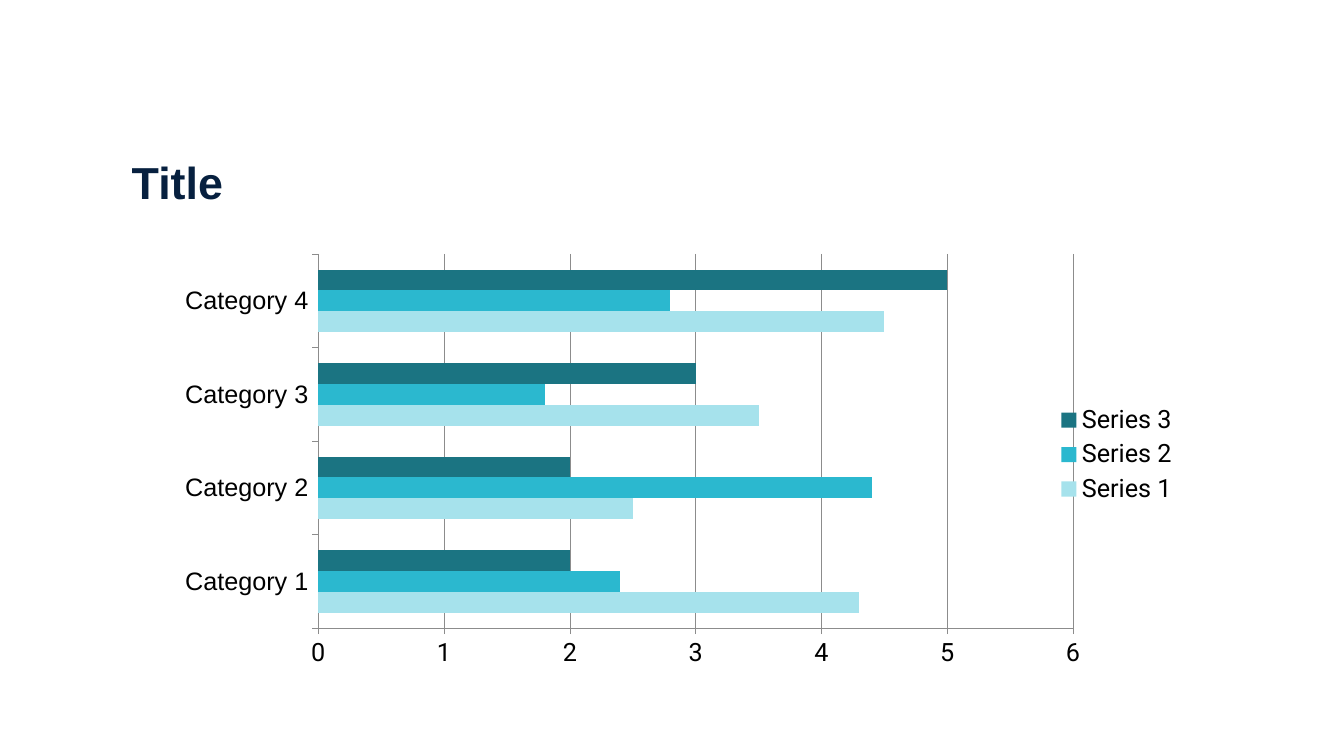
import dataclasses

import pptx
import pptx.chart.data
import pptx.dml.color
import pptx.enum.chart
import pptx.enum.text
import pptx.oxml
import pptx.oxml.ns
import pptx.util

Cm = pptx.util.Cm
Pt = pptx.util.Pt


def color(value):
    return pptx.dml.color.RGBColor.from_string(value)


@dataclasses.dataclass(frozen=True)
class Theme:
    heading_font: str = "Arial"
    body_font: str = "Roboto"
    title_size: int = 32
    chart_size: int = 18
    title_color: str = "07203F"
    text_color: str = "000000"
    line_color: str = "8C8C8C"
    line_width: float = 0.5
    series_colors: tuple = ("A6E2EC", "2BB8CF", "1B7482")


class SlideBuilder:
    def __init__(self, slide, theme):
        self.slide = slide
        self.theme = theme

    def style_font(self, font, name, size, rgb, bold=False):
        font.name = name
        font.size = Pt(size)
        font.bold = bold
        font.color.rgb = color(rgb)

    def style_line(self, line):
        line.color.rgb = color(self.theme.line_color)
        line.width = Pt(self.theme.line_width)

    def title(self, text, left, top, width, height):
        frame = self.slide.shapes.add_textbox(left, top, width, height).text_frame
        frame.word_wrap = True
        frame.auto_size = pptx.enum.text.MSO_AUTO_SIZE.SHAPE_TO_FIT_TEXT
        paragraph = frame.paragraphs[0]
        paragraph.text = text
        self.style_font(paragraph.font, self.theme.heading_font,
                        self.theme.title_size, self.theme.title_color, bold=True)

    def bar_chart(self, categories, series, left, top, width, height, plot_area):
        theme = self.theme
        data = pptx.chart.data.CategoryChartData()
        data.categories = categories
        for name, values in series.items():
            data.add_series(name, values)
        chart = self.slide.shapes.add_chart(
            pptx.enum.chart.XL_CHART_TYPE.BAR_CLUSTERED,
            left, top, width, height, data).chart
        chart.has_title = False
        self.style_font(chart.font, theme.body_font, theme.chart_size, theme.text_color)

        # Bars
        plot = chart.plots[0]
        plot.gap_width = 150
        plot.vary_by_categories = False
        for bars, fill_color in zip(plot.series, theme.series_colors):
            bars.format.fill.solid()
            bars.format.fill.fore_color.rgb = color(fill_color)

        # Axes and gridlines
        for axis, font_name in ((chart.category_axis, theme.heading_font),
                                (chart.value_axis, theme.body_font)):
            axis.major_tick_mark = pptx.enum.chart.XL_TICK_MARK.OUTSIDE
            axis.minor_tick_mark = pptx.enum.chart.XL_TICK_MARK.NONE
            self.style_line(axis.format.line)
            self.style_font(axis.tick_labels.font, font_name,
                            theme.chart_size, theme.text_color)
        chart.category_axis.has_major_gridlines = False
        value_axis = chart.value_axis
        value_axis.minimum_scale = 0
        value_axis.maximum_scale = 6
        value_axis.major_unit = 1
        value_axis.has_major_gridlines = True
        self.style_line(value_axis.major_gridlines.format.line)

        # Legend
        chart.has_legend = True
        chart.legend.position = pptx.enum.chart.XL_LEGEND_POSITION.RIGHT
        chart.legend.include_in_layout = False
        self.style_font(chart.legend.font, theme.body_font,
                        theme.chart_size, theme.text_color)
        self.place_plot(chart, plot_area)

    def place_plot(self, chart, plot_area):
        """Fix the inner plot area as fractions of the chart."""
        settings = [("layoutTarget", "inner"), ("xMode", "edge"), ("yMode", "edge")]
        settings += zip("xywh", plot_area)
        items = "".join(f'<c:{tag} val="{value}"/>' for tag, value in settings)
        layout = pptx.oxml.parse_xml(
            f'<c:layout {pptx.oxml.ns.nsdecls("c")}>'
            f"<c:manualLayout>{items}</c:manualLayout></c:layout>")
        area = chart.element.find(".//" + pptx.oxml.ns.qn("c:plotArea"))
        for old_layout in area.findall(pptx.oxml.ns.qn("c:layout")):
            area.remove(old_layout)
        area.insert(0, layout)


def main():
    deck = pptx.Presentation()
    deck.slide_width = Cm(33.87)
    deck.slide_height = Cm(19.05)
    builder = SlideBuilder(deck.slides.add_slide(deck.slide_layouts[6]), Theme())

    # Heading
    builder.title("Title", Cm(3.07), Cm(3.78), Cm(16.84), Cm(1.63))

    # Chart
    builder.bar_chart(
        [f"Category {number}" for number in range(1, 5)],
        {
            "Series 1": (4.3, 2.5, 3.5, 4.5),
            "Series 2": (2.4, 4.4, 1.8, 2.8),
            "Series 3": (2, 2, 3, 5),
        },
        Cm(3.53), Cm(5.84), Cm(26.42), Cm(11.23),
        plot_area=(0.17, 0.05, 0.72, 0.84),
    )
    deck.save("out.pptx")


if __name__ == "__main__":
    main()
